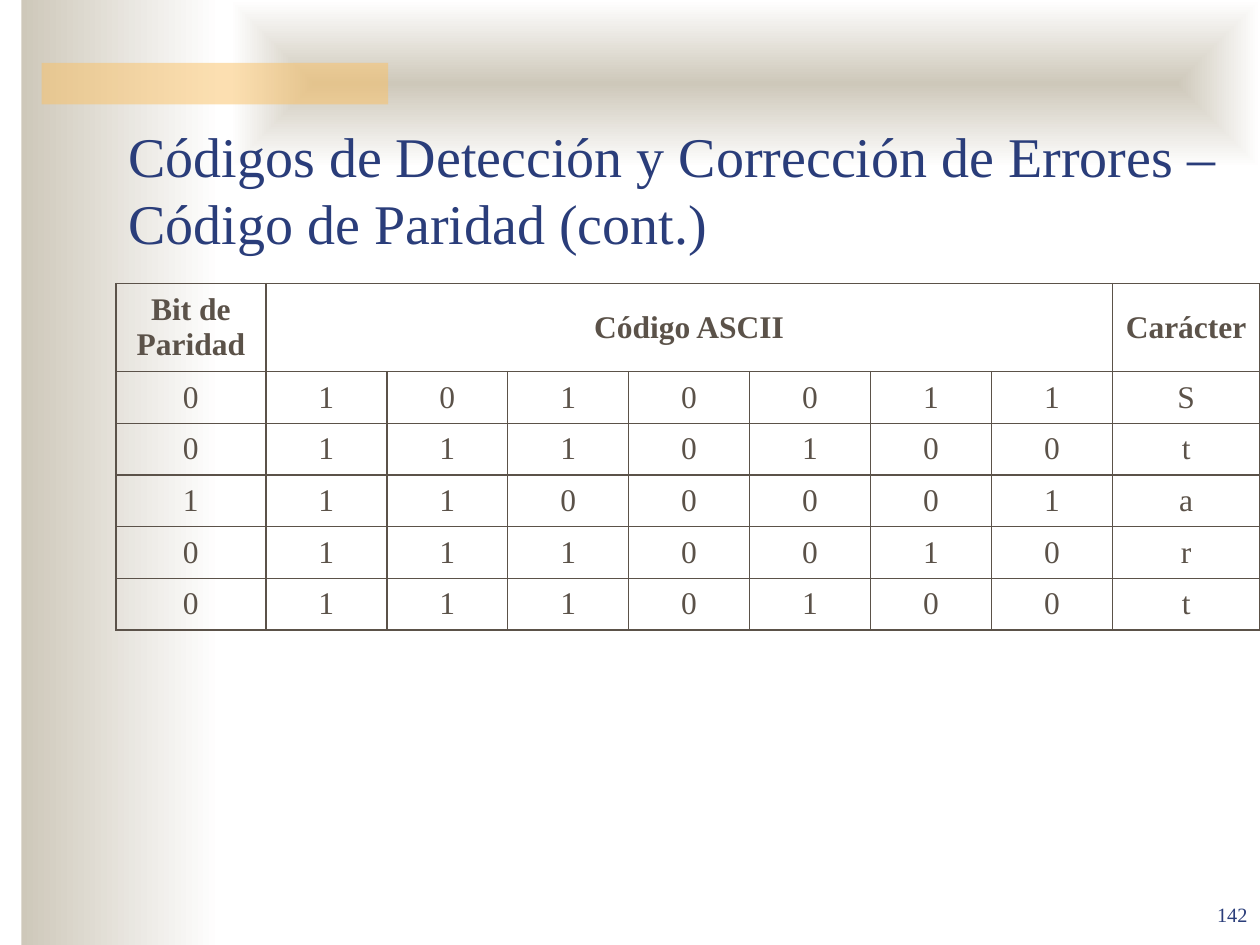
from lxml import etree
from pptx import Presentation
from pptx import util as u
from pptx.dml.color import RGBColor
from pptx.enum import shapes, text
from pptx.oxml import parse_xml
from pptx.oxml.ns import nsdecls, qn

NAVY = RGBColor(0x2A, 0x3D, 0x7A)
BROWN = RGBColor(0x5B, 0x52, 0x49)
SAND = RGBColor(0xCE, 0xC8, 0xBA)
WHITE = RGBColor(0xFF, 0xFF, 0xFF)
AMBER = RGBColor(0xFA, 0xC1, 0x64)
FONT = "Times New Roman"

TITLE = "Códigos de Detección y Corrección de Errores – Código de Paridad (cont.)"
HEADERS = {0: "Bit de Paridad", 1: "Código ASCII", 8: "Carácter"}
CODES = ["01010011S", "01110100t", "11100001a", "01110010r", "01110100t"]
COLUMN_WIDTHS = [1.19] + [0.96] * 7 + [1.17]
ROW_HEIGHTS = [0.7] + [0.41] * len(CODES)
LEFT, TABLE_TOP = 0.92, 2.25

LINEAR = '<a:lin ang="0" scaled="0"/>'
CENTRED = ('<a:path path="shape"><a:fillToRect l="50000" t="50000" '
           'r="50000" b="50000"/></a:path>')


def inches(*lengths):
    """Convert several lengths to EMU."""
    return [u.Inches(length) for length in lengths]


def format_text(paragraph, size, color, align, bold=False):
    """Set the alignment of a paragraph and the font of its runs."""
    paragraph.alignment = align
    for run in paragraph.runs:
        run.font.name = FONT
        run.font.size = u.Pt(size)
        run.font.bold = bold
        run.font.color.rgb = color


def add_panel(slide, *box):
    """Add a plain rectangle without line or shadow."""
    panel = slide.shapes.add_shape(shapes.MSO_SHAPE.RECTANGLE, *inches(*box))
    panel.shadow.inherit = False
    panel.line.fill.background()
    return panel


def add_gradient_panel(slide, direction, *box):
    """Add a rectangle that fades from sand to white."""
    properties = add_panel(slide, *box)._element.spPr
    gradient = parse_xml(
        f'<a:gradFill {nsdecls("a")} rotWithShape="1"><a:gsLst>'
        f'<a:gs pos="0"><a:srgbClr val="{SAND}"/></a:gs>'
        f'<a:gs pos="100000"><a:srgbClr val="{WHITE}"/></a:gs>'
        f'</a:gsLst>{direction}</a:gradFill>')
    properties.find(qn("a:prstGeom")).addnext(gradient)


def add_accent_bar(slide, *box):
    """Add the half-transparent amber bar."""
    bar = add_panel(slide, *box)
    bar.fill.solid()
    bar.fill.fore_color.rgb = AMBER
    color = bar._element.spPr.find(".//" + qn("a:srgbClr"))
    etree.SubElement(color, qn("a:alpha")).set("val", "50000")


def set_title(slide):
    """Place and format the title in front of the panels."""
    title = slide.shapes.title
    slide.shapes._spTree.append(title._element)
    title.left, title.top, title.width, title.height = inches(LEFT, 0.58, 9.08, 1.5)
    frame = title.text_frame
    frame.text = TITLE
    frame.word_wrap = True
    frame.auto_size = text.MSO_AUTO_SIZE.NONE
    frame.vertical_anchor = text.MSO_ANCHOR.BOTTOM
    format_text(frame.paragraphs[0], 32, NAVY, text.PP_ALIGN.LEFT)


def format_cell(cell):
    """Give a cell thin borders, no fill and a middle anchor."""
    cell.vertical_anchor = text.MSO_ANCHOR.MIDDLE
    properties = cell._tc.get_or_add_tcPr()
    for side in "LRTB":
        properties.append(parse_xml(
            f'<a:ln{side} {nsdecls("a")} w="12700"><a:solidFill>'
            f'<a:srgbClr val="{BROWN}"/></a:solidFill></a:ln{side}>'))
    cell.fill.background()


def add_parity_table(slide):
    """Add the table of parity bits, ASCII codes and characters."""
    box = inches(LEFT, TABLE_TOP, sum(COLUMN_WIDTHS), sum(ROW_HEIGHTS))
    table = slide.shapes.add_table(len(ROW_HEIGHTS), len(COLUMN_WIDTHS), *box).table
    table.first_row = table.horz_banding = False
    for column, width in zip(table.columns, COLUMN_WIDTHS):
        column.width = u.Inches(width)
    for row, height in zip(table.rows, ROW_HEIGHTS):
        row.height = u.Inches(height)
    table.cell(0, 1).merge(table.cell(0, 7))
    for row, values in enumerate([HEADERS] + [dict(enumerate(code)) for code in CODES]):
        for column in range(len(COLUMN_WIDTHS)):
            cell = table.cell(row, column)
            format_cell(cell)
            if column in values:
                cell.text_frame.text = values[column]
                format_text(cell.text_frame.paragraphs[0], 18, BROWN,
                            text.PP_ALIGN.CENTER, bold=row == 0)


def add_page_number(slide):
    """Add the raised page number in the bottom right corner."""
    frame = slide.shapes.add_textbox(*inches(9, 7.01, 1, 0.5)).text_frame
    frame.text = "142"
    frame.word_wrap = True
    frame.vertical_anchor = text.MSO_ANCHOR.BOTTOM
    paragraph = frame.paragraphs[0]
    format_text(paragraph, 20, NAVY, text.PP_ALIGN.RIGHT)
    paragraph.runs[0].font._element.set("baseline", "30000")


def main():
    """Build the slide and save it."""
    presentation = Presentation()
    presentation.slide_width, presentation.slide_height = inches(10, 7.5)
    slide = presentation.slides.add_slide(presentation.slide_layouts[5])
    add_gradient_panel(slide, LINEAR, 0.17, 0, 1.58, 7.5)
    add_gradient_panel(slide, CENTRED, 1.83, 0, 8.17, 1.33)
    add_accent_bar(slide, 0.33, 0.5, 2.75, 0.33)
    set_title(slide)
    add_parity_table(slide)
    add_page_number(slide)
    presentation.save("out.pptx")


if __name__ == "__main__":
    main()
